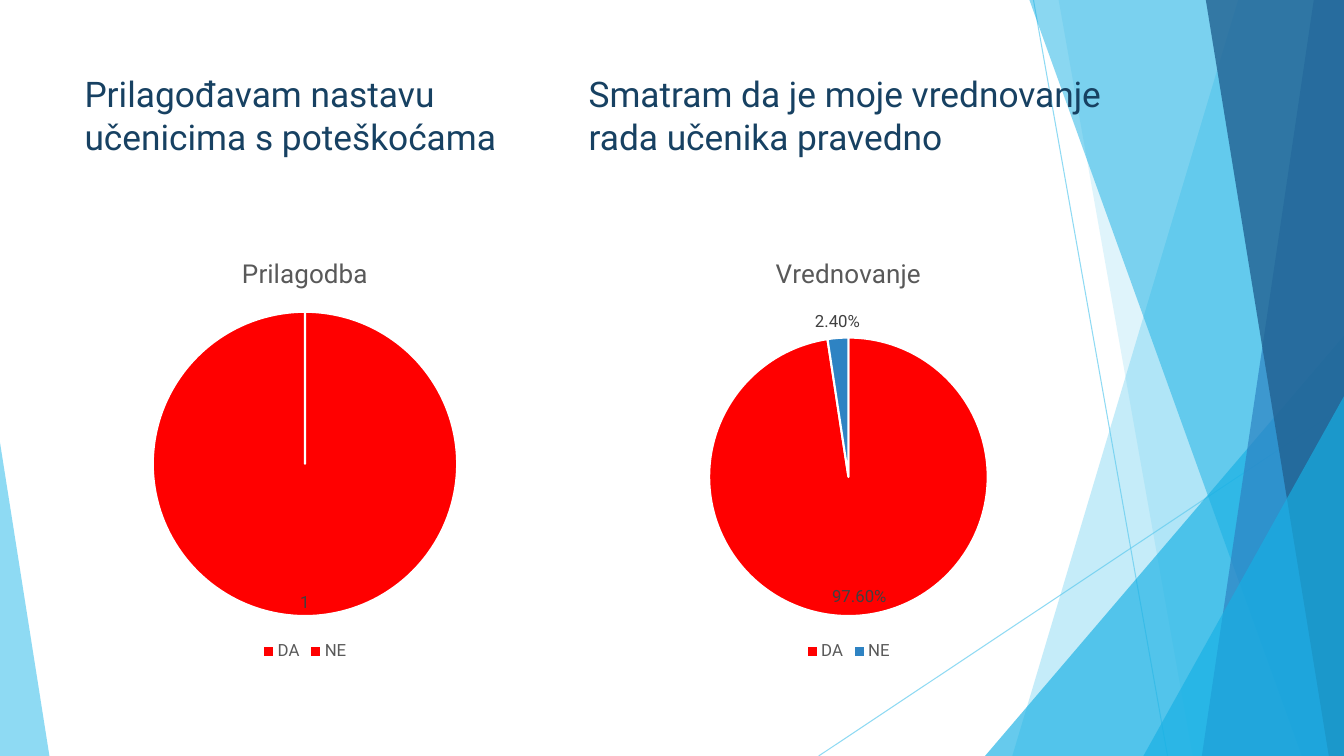
import pptx
import pptx.util
import pptx.chart.data
import pptx.dml.color
import pptx.enum.chart
import pptx.enum.shapes
import pptx.enum.text
import pptx.oxml
from lxml import etree

Inches, Pt = pptx.util.Inches, pptx.util.Pt
RGBColor = pptx.dml.color.RGBColor
A = "{http://schemas.openxmlformats.org/drawingml/2006/main}"

WHITE = RGBColor(0xFF, 0xFF, 0xFF)
BLACK = RGBColor(0x00, 0x00, 0x00)
SKY = RGBColor(0x5F, 0xCB, 0xEF)
CYAN = RGBColor(0x17, 0xB0, 0xE4)
BLUE = RGBColor(0x2E, 0x83, 0xC3)
DEEP = RGBColor(0x22, 0x62, 0x92)
NAVY = RGBColor(0x17, 0x41, 0x62)
RED = RGBColor(0xFF, 0x00, 0x00)
GREY = RGBColor(0x59, 0x59, 0x59)
DARK = RGBColor(0x40, 0x40, 0x40)
WIDTH, HEIGHT = 13.33, 7.5


def style_font(font, size, color, name="Roboto"):
    font.size, font.name, font.bold = Pt(size), name, False
    font.color.rgb = color


def add_text(p, text, size=25.2, color=NAVY):
    r = p.add_run()
    r.text = text
    style_font(r.font, size, color)


def set_alpha(element, percent):
    color = next(element.iter(A + "srgbClr"))
    etree.SubElement(color, A + "alpha", val=str(percent * 1000))


class Deck:
    """Draws facet decorations, headings and pie charts on one slide."""

    def __init__(self):
        self.prs = pptx.Presentation()
        self.prs.slide_width = Inches(WIDTH)
        self.prs.slide_height = Inches(HEIGHT)
        self.s = self.prs.slides.add_slide(self.prs.slide_layouts[6])
        self.shapes = self.s.shapes

    def line(self, x1, y1, x2, y2):
        c = self.shapes.add_connector(
            pptx.enum.shapes.MSO_CONNECTOR.STRAIGHT,
            Inches(x1), Inches(y1), Inches(x2), Inches(y2))
        c.line.color.rgb, c.line.width = SKY, Pt(0.75)
        spPr = c.line._get_or_add_ln().getparent()
        set_alpha(spPr, 70)
        etree.SubElement(spPr, A + "effectLst")

    def fill(self, sp, color, alpha):
        sp.shadow.inherit = False
        sp.fill.solid()
        sp.fill.fore_color.rgb = color
        set_alpha(sp._element.spPr, alpha)
        sp.line.fill.background()

    def band(self, top_x, bottom_x, color, alpha):
        points = [(WIDTH, 0), (WIDTH, HEIGHT), (bottom_x, HEIGHT)]
        builder = self.shapes.build_freeform(Inches(top_x), 0, scale=1.0)
        builder.add_line_segments(
            [(Inches(x), Inches(y)) for x, y in points], close=True)
        self.fill(builder.convert_to_shape(), color, alpha)

    def triangle(self, left, top, width, apex, color, alpha):
        sp = self.shapes.add_shape(
            pptx.enum.shapes.MSO_SHAPE.ISOSCELES_TRIANGLE,
            Inches(left), Inches(top), Inches(width), Inches(HEIGHT - top))
        sp.adjustments[0] = apex
        self.fill(sp, color, alpha)

    def heading(self, lines, tab):
        sp = self.shapes.add_textbox(
            Inches(0.74), Inches(0.67), Inches(10.86), Inches(1.44))
        tf = sp.text_frame
        tf.word_wrap = True
        tf.vertical_anchor = pptx.enum.text.MSO_ANCHOR.TOP
        p = tf.paragraphs[0]
        tabs = etree.SubElement(p._p.get_or_add_pPr(), A + "tabLst")
        etree.SubElement(tabs, A + "tab", pos=str(Inches(tab)), algn="l")
        for i, columns in enumerate(lines):
            if i:
                p.add_line_break()
            add_text(p, "\t".join(columns))

    def pie(self, left, title, values, colors, number_format):
        data = pptx.chart.data.CategoryChartData(number_format=number_format)
        data.categories = ["DA", "NE"]
        data.add_series(title, values)
        chart = self.shapes.add_chart(
            pptx.enum.chart.XL_CHART_TYPE.PIE, Inches(left), Inches(2.36),
            Inches(4.57), Inches(4.24), data).chart
        style_font(chart.font, 10, BLACK)
        chart.has_title = True
        add_text(chart.chart_title.text_frame.paragraphs[0], title, 18.6, GREY)
        chart.chart_title.include_in_layout = False
        chart.has_legend = True
        chart.legend.position = pptx.enum.chart.XL_LEGEND_POSITION.BOTTOM
        chart.legend.include_in_layout = False
        style_font(chart.legend.font, 12, GREY)
        plot = chart.plots[0]
        plot.vary_by_categories = True
        for i, color in enumerate(colors):
            fmt = plot.series[0].points[i].format
            fmt.fill.solid()
            fmt.fill.fore_color.rgb = color
            fmt.line.color.rgb, fmt.line.width = WHITE, Pt(1.5)
        labels = plot.series[0].data_labels
        labels.show_value = True
        labels.show_percentage = False
        labels.number_format = number_format
        labels.number_format_is_linked = False
        labels.position = pptx.enum.chart.XL_LABEL_POSITION.BEST_FIT
        style_font(labels.font, 12, DARK)


def main():
    deck = Deck()
    deck.line(10.25, 0, 11.58, HEIGHT)
    deck.line(WIDTH, 4.03, 8.12, HEIGHT)
    deck.band(12.28, 10.04, SKY, 36)
    deck.band(10.5, 11.83, SKY, 20)
    deck.triangle(9.77, 3.33, 3.56, 1, CYAN, 66)
    deck.band(10.21, 12.91, CYAN, 50)
    deck.band(13.03, 11.92, BLUE, 70)
    deck.band(11.96, 13.18, DEEP, 80)
    deck.triangle(11.34, 3.93, 1.99, 1, CYAN, 66)
    deck.triangle(0, 4.39, 0.49, 0, SKY, 70)
    deck.heading([
        ("Prilagođavam nastavu", "Smatram da je moje vrednovanje"),
        ("učenicima s poteškoćama", "rada učenika pravedno"),
    ], tab=5)
    deck.pie(0.74, "Prilagodba", (1, None), (RED, RED), "General")
    deck.pie(6.13, "Vrednovanje", (0.976, 0.024), (RED, BLUE), "0.00%")
    deck.prs.save("out.pptx")


if __name__ == "__main__":
    main()
